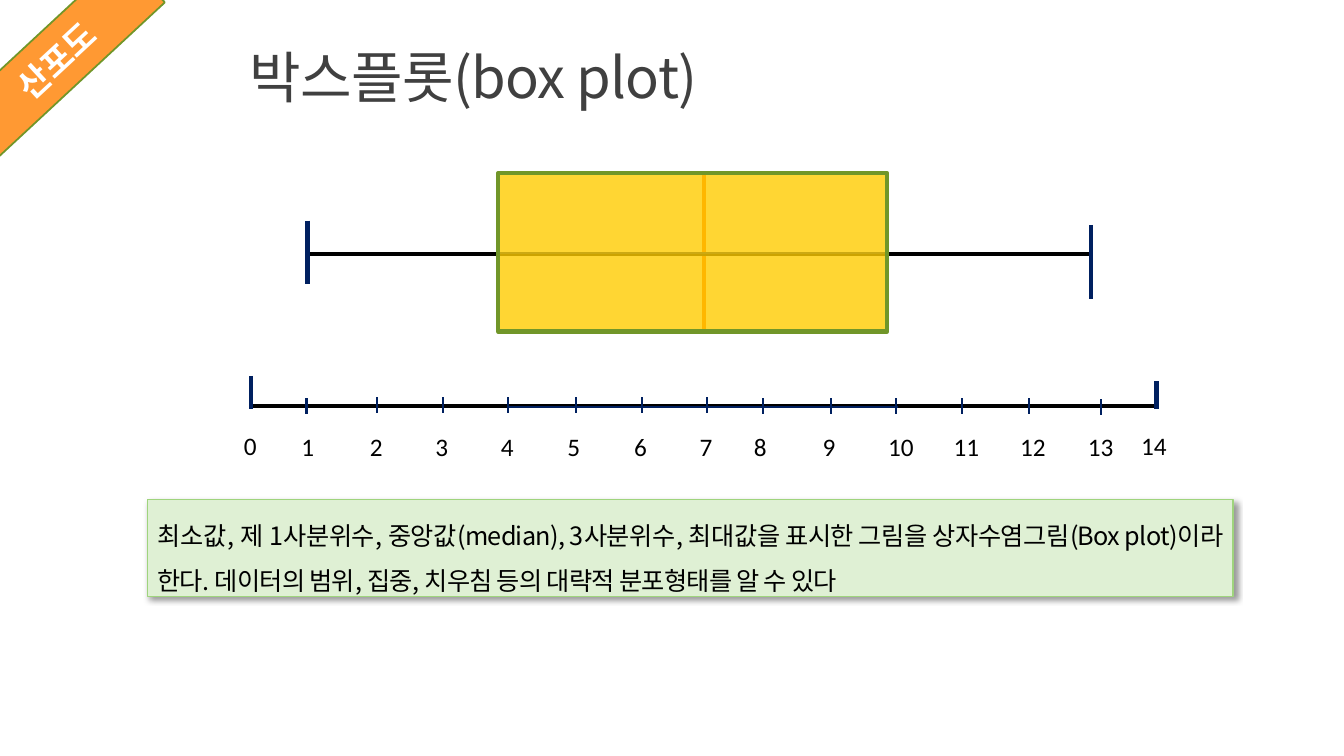
import pptx
import pptx.dml.color
import pptx.enum.dml
import pptx.enum.shapes
import pptx.enum.text
import pptx.oxml
import pptx.oxml.ns
import pptx.util
from dataclasses import dataclass
from lxml import etree

Inches = pptx.util.Inches
Align = pptx.enum.text.PP_ALIGN
Anchor = pptx.enum.text.MSO_ANCHOR
Fit = pptx.enum.text.MSO_AUTO_SIZE
qn = pptx.oxml.ns.qn
HANGUL = "Noto Sans CJK KR"
NAVY, BLACK, GREEN = "002060", "000000", "719629"


@dataclass
class Line:
    x1: float
    y1: float
    x2: float
    y2: float
    color: str = NAVY
    width: float = 1.5


@dataclass
class Box:
    left: float
    top: float
    width: float
    height: float
    fill: str
    edge: str
    weight: float


@dataclass
class Mark:
    x: float
    top: float
    left: float


def paint(target, color: str) -> None:
    if hasattr(target, "solid"):
        target.solid()
        target = target.fore_color
    target.rgb = pptx.dml.color.RGBColor.from_string(color)


def draw_line(parent, line: Line) -> None:
    item = parent.add_connector(pptx.enum.shapes.MSO_CONNECTOR.STRAIGHT,
                                *map(Inches, (line.x1, line.y1, line.x2, line.y2)))
    paint(item.line.fill, line.color)
    item.line.width = pptx.util.Pt(line.width)
    etree.SubElement(item._element.spPr, qn("a:effectLst"))


def draw_box(parent, box: Box):
    item = parent.add_shape(pptx.enum.shapes.MSO_SHAPE.RECTANGLE,
                            *map(Inches, (box.left, box.top, box.width, box.height)))
    item.shadow.inherit = False
    paint(item.fill, box.fill)
    paint(item.line.fill, box.edge)
    item.line.width = pptx.util.Pt(box.weight)
    return item


def write(shape, text: str, *, size: float = 18, font: str = "Calibri", color: str = BLACK,
          bold: bool = False, align=Align.LEFT, anchor=Anchor.TOP, pitch: float = 1,
          track: float = 0, wrap: bool = True, fit=Fit.NONE) -> None:
    frame = shape.text_frame
    frame.word_wrap = wrap
    frame.auto_size = fit
    frame.vertical_anchor = anchor
    para = frame.paragraphs[0]
    para.alignment = align
    para.line_spacing = pitch
    run = para.add_run()
    run.text = text
    run.font.size = pptx.util.Pt(size)
    run.font.bold = bold
    run.font.name = font
    paint(run.font.color, color)
    props = run.font._element
    etree.SubElement(props, qn("a:ea")).set("typeface", HANGUL)
    if track:
        props.set("spc", str(round(track * 100)))


def add_text(parent, left: float, top: float, width: float, height: float, text: str, **style):
    item = parent.add_textbox(*map(Inches, (left, top, width, height)))
    write(item, text, **style)
    return item


def fade(shape, percent: int) -> None:
    color = shape.fill._xPr.find(qn("a:solidFill"))[0]
    etree.SubElement(color, qn("a:alpha")).set("val", str(percent * 1000))


def cast_shade(shape) -> None:
    effects = shape._element.spPr.find(qn("a:effectLst"))
    shade = etree.SubElement(effects, qn("a:outerShdw"), blurRad=str(pptx.util.Pt(4)),
                             dist=str(pptx.util.Pt(3)), dir=str(45 * 60000),
                             algn="tl", rotWithShape="0")
    color = etree.SubElement(shade, qn("a:srgbClr"), val=BLACK)
    etree.SubElement(color, qn("a:alpha"), val="40000")


MARKS = [
    Mark(3.04, 3.95, 2.89), Mark(3.74, 3.94, 3.57), Mark(4.39, 3.94, 4.22),
    Mark(5.04, 3.94, 4.87), Mark(5.71, 3.94, 5.53), Mark(6.37, 3.94, 6.19),
    Mark(7.01, 3.94, 6.84), Mark(7.57, 3.95, 7.38), Mark(8.24, 3.95, 8.06),
    Mark(8.89, 3.95, 8.71), Mark(9.54, 3.95, 9.36), Mark(10.21, 3.95, 10.02),
    Mark(10.92, 3.96, 10.69),
]
SCALE = [
    Line(2.49, 4.03, 11.47, 4.03, BLACK, 3),
    Line(5.05, 4.04, 8.91, 4.04),
    Line(2.49, 3.73, 2.49, 4.06, width=3),
    Line(11.47, 3.78, 11.47, 4.06, width=3),
]
WHISKERS = [
    Line(3.04, 2.52, 10.82, 2.52, BLACK, 3),
    Line(4.94, 2.51, 8.8, 2.51),
    Line(3.05, 2.19, 3.05, 2.82, width=3),
    Line(10.82, 2.23, 10.82, 2.97, width=3),
]


def draw_scale(parent) -> None:
    ticks = [Line(mark.x, mark.top, mark.x, mark.top + 0.16) for mark in MARKS]
    for line in SCALE + ticks:
        draw_line(parent, line)
    for value, mark in enumerate(MARKS, 1):
        width = 0.36 if value < 10 else 0.51
        add_text(parent, mark.left, 4.23, width, 0.4, str(value),
                 wrap=False, fit=Fit.SHAPE_TO_FIT_TEXT)
    for left, width, value in ((2.32, 0.33, "0"), (11.22, 0.46, "14")):
        add_text(parent, left, 4.22, width, 0.4, value,
                 wrap=False, fit=Fit.SHAPE_TO_FIT_TEXT)
    draw_line(parent, Line(6.98, 1.73, 6.98, 3.31, "FF6600", 3))


def draw_plot(parent) -> None:
    for line in WHISKERS:
        draw_line(parent, line)
    fade(draw_box(parent, Box(4.94, 1.72, 3.86, 1.57, "FFCC00", GREEN, 3)), 80)


def draw_note(parent) -> None:
    note = draw_box(parent, Box(1.46, 4.96, 10.77, 0.96, "DFF0D4", "9FD47D", 0.75))
    cast_shade(note)
    style = dict(font=HANGUL, align=Align.JUSTIFY, pitch=1.5, fit=Fit.SHAPE_TO_FIT_TEXT)
    write(note, "최소값, ", track=-0.2, **style)
    write(note, "제 1사분위수, 중앙값(median), 3사분위수, 최대값을 표시한 그림을 "
          "상자수염그림(Box plot)이라 한다. 데이터의 범위, 집중, 치우침 등의 "
          "대략적 분포형태를 알 수 있다", track=-0.5, **style)


def main() -> None:
    deck = pptx.Presentation()
    deck.slide_width, deck.slide_height = Inches(13.33), Inches(7.5)
    shapes = deck.slides.add_slide(deck.slide_layouts[6]).shapes
    add_text(shapes, 2.38, 0.13, 6.1, 1.02, "박스플롯(box plot)", size=40, font=HANGUL,
             color="404040", anchor=Anchor.BOTTOM, pitch=0.9, track=-0.5)
    ribbon = draw_box(shapes, Box(-0.62, 0.29, 2.36, 0.62, "FF9933", GREEN, 1.25))
    ribbon.rotation = 317.1
    write(ribbon, "산포도", size=24, color="FFFFFF", bold=True,
          align=Align.CENTER, anchor=Anchor.MIDDLE)
    draw_scale(shapes.add_group_shape().shapes)
    draw_note(shapes)
    draw_plot(shapes.add_group_shape().shapes)
    deck.save("out.pptx")


if __name__ == "__main__":
    main()
